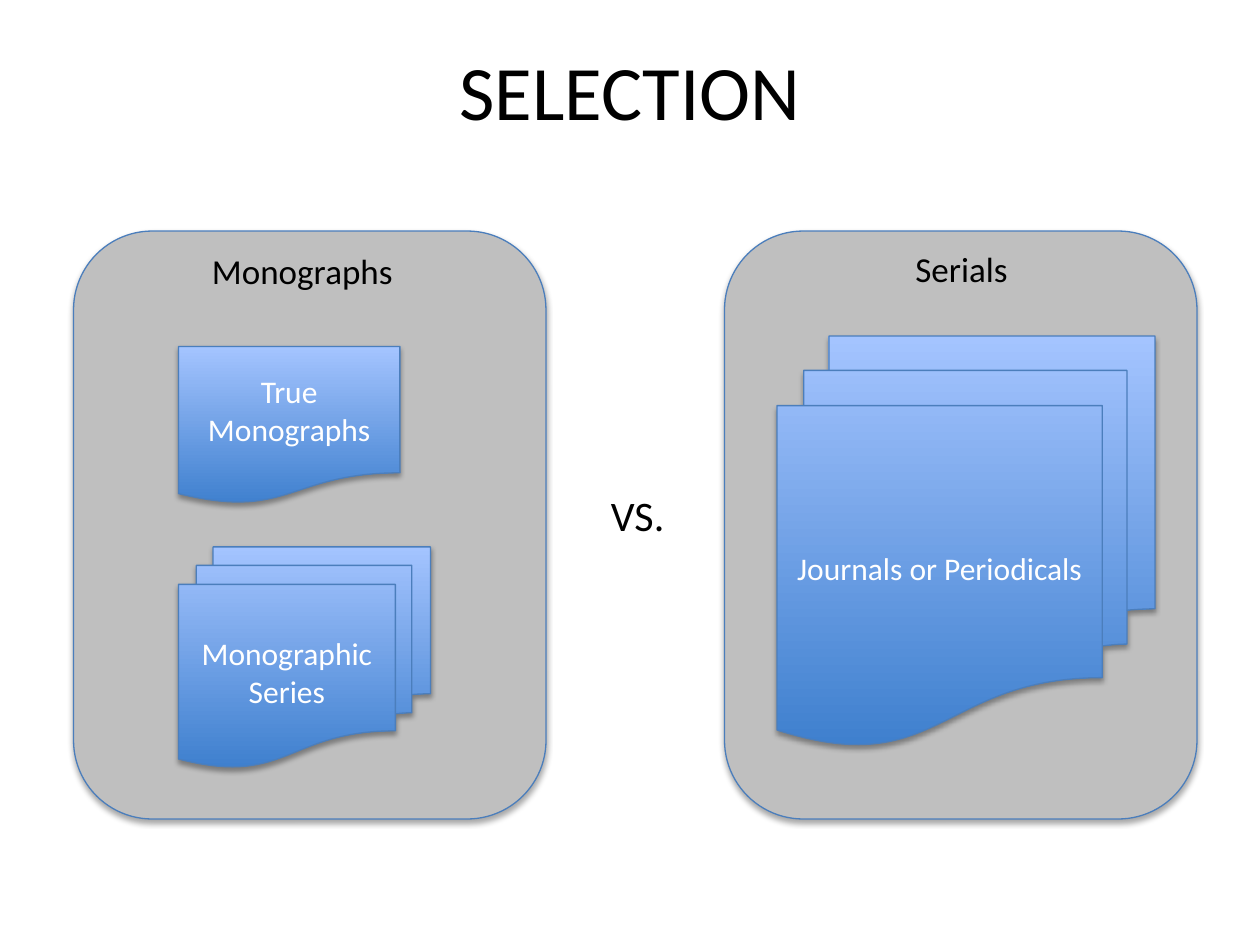
from dataclasses import dataclass
from lxml.etree import SubElement
from pptx import Presentation
from pptx.dml.color import RGBColor
from pptx.enum.shapes import MSO_SHAPE
from pptx.enum.text import MSO_ANCHOR, MSO_AUTO_SIZE, PP_ALIGN
from pptx.oxml.ns import qn
from pptx.util import Pt

BLACK, WHITE, GREY = "000000", "FFFFFF", "BFBFBF"
OUTLINE, DARK_BLUE, LIGHT_BLUE = "4B7EBC", "3F80CE", "A4C4FF"
PANEL_TOP, PANEL_WIDTH, PANEL_HEIGHT = 132, 270, 336
PANEL_LEFTS = (42, 414)


@dataclass
class Label:
    text: str
    left: float
    top: float
    width: float
    height: float
    size: int


@dataclass
class Document:
    text: str
    kind: MSO_SHAPE
    left: float
    top: float
    width: float
    height: float


LABELS = (
    Label("VS.", 342, 276, 45.2, 36, 24),
    Label("Monographs", 114, 139.2, 118.8, 31.5, 20),
    Label("Serials", 516, 138, 67.5, 31.5, 20),
)
DOCUMENTS = (
    Document("Journals or Periodicals", MSO_SHAPE.FLOWCHART_MULTIDOCUMENT, 444, 192, 216, 234),
    Document("Monographic Series", MSO_SHAPE.FLOWCHART_MULTIDOCUMENT, 102, 312.5, 144, 126),
    Document("True Monographs", MSO_SHAPE.FLOWCHART_DOCUMENT, 102, 198, 126.5, 90),
)


def rgb(color: str) -> RGBColor:
    return RGBColor.from_string(color)


def set_attrs(obj, values: dict) -> None:
    for name, value in values.items():
        setattr(obj, name, value)


def write(tf, text: str, size: int, color: str, align=PP_ALIGN.CENTER) -> None:
    p = tf.paragraphs[0]
    p.alignment = align
    r = p.add_run()
    r.text = text
    set_attrs(r.font, {"name": "Calibri", "size": Pt(size)})
    r.font.color.rgb = rgb(color)


def add_shadow(sp) -> None:
    sp.shadow.inherit = False
    effects = sp._element.spPr.find(qn("a:effectLst"))
    shadow = SubElement(effects, qn("a:outerShdw"), blurRad=str(Pt(3.1)),
                        dist=str(Pt(1.8)), dir="5400000", rotWithShape="0")
    color = SubElement(shadow, qn("a:srgbClr"), val=BLACK)
    SubElement(color, qn("a:alpha"), val="35000")


def add_outlined(s, kind: MSO_SHAPE, left: float, top: float, width: float, height: float):
    sp = s.shapes.add_shape(kind, Pt(left), Pt(top), Pt(width), Pt(height))
    sp.line.color.rgb = rgb(OUTLINE)
    sp.line.width = Pt(0.75)
    add_shadow(sp)
    return sp


def add_panel(s, left: float) -> None:
    sp = add_outlined(s, MSO_SHAPE.FLOWCHART_ALTERNATE_PROCESS, left, PANEL_TOP,
                      PANEL_WIDTH, PANEL_HEIGHT)
    sp.fill.solid()
    sp.fill.fore_color.rgb = rgb(GREY)


def add_document(s, doc: Document) -> None:
    sp = add_outlined(s, doc.kind, doc.left, doc.top, doc.width, doc.height)
    sp.fill.gradient()
    sp.fill.gradient_angle = 90
    for stop, color, position in zip(sp.fill.gradient_stops, (DARK_BLUE, LIGHT_BLUE), (0, 1)):
        stop.color.rgb = rgb(color)
        stop.position = position
    set_attrs(sp.text_frame, {"word_wrap": True, "vertical_anchor": MSO_ANCHOR.MIDDLE})
    write(sp.text_frame, doc.text, 18, WHITE)


def add_label(s, label: Label) -> None:
    sp = s.shapes.add_textbox(Pt(label.left), Pt(label.top), Pt(label.width), Pt(label.height))
    set_attrs(sp.text_frame, {"word_wrap": False, "auto_size": MSO_AUTO_SIZE.SHAPE_TO_FIT_TEXT})
    write(sp.text_frame, label.text, label.size, BLACK, PP_ALIGN.LEFT)


def main() -> None:
    prs = Presentation()
    set_attrs(prs, {"slide_width": Pt(720), "slide_height": Pt(540)})
    s = prs.slides.add_slide(prs.slide_layouts[5])
    title = s.shapes.title
    set_attrs(title, {"left": Pt(36), "top": Pt(6), "width": Pt(648), "height": Pt(90)})
    title.text_frame.vertical_anchor = MSO_ANCHOR.MIDDLE
    write(title.text_frame, "SELECTION", 44, BLACK)
    for left in PANEL_LEFTS:
        add_panel(s, left)
    for doc in DOCUMENTS:
        add_document(s, doc)
    for label in LABELS:
        add_label(s, label)
    prs.save("out.pptx")


if __name__ == "__main__":
    main()
